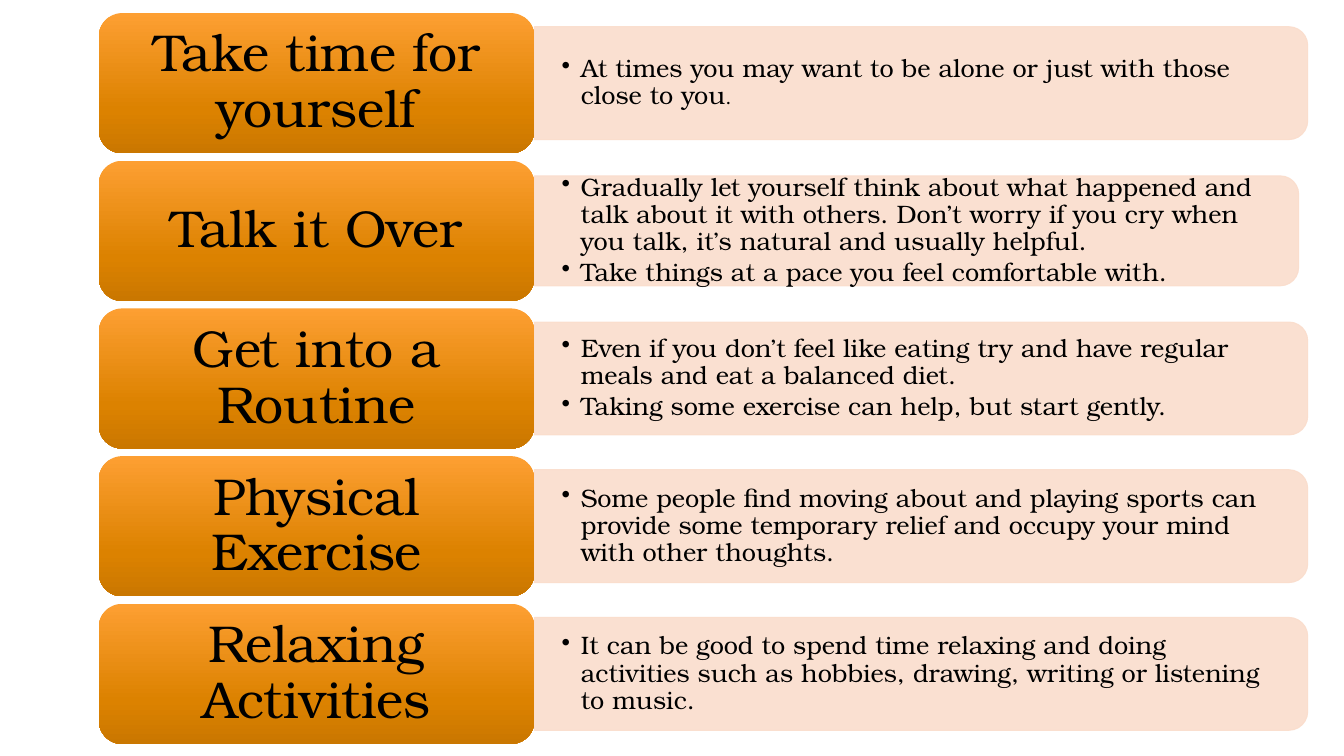
from copy import deepcopy

from lxml.etree import SubElement
from pptx import Presentation
from pptx.dml.color import RGBColor
from pptx.enum.shapes import MSO_SHAPE as Shape
from pptx.enum.text import MSO_ANCHOR as Anchor, PP_ALIGN as Align
from pptx.oxml.ns import qn
from pptx.util import Inches, Pt

FONT = "TeX Gyre Bonum"
COLORS = {"panel": "FADDCC", "text": "000000"}
LABEL_GRADIENT = [(0, "FD9F32"), (0.69, "DC8200"), (1, "CA7700")]

LEFT, TOP, PITCH = 0.98, 0.13, 1.465
LABEL_W, LABEL_H = 4.32, 1.39
PANEL_LEFT = LEFT + LABEL_W
WIDE, NARROW = (7.67, 1.12), (7.58, 1.09)

ADVICE = [
    ("Take time for yourself", WIDE, [
        ["At times you may want to be alone or just with those close to you", "."]]),
    ("Talk it Over", NARROW, [
        ["Gradually let yourself think about what happened and talk about it with "
         "others. Don’t worry if you cry when you talk, it’s natural and usually helpful."],
        ["Take things at a pace you feel comfortable with."]]),
    ("Get into a Routine", WIDE, [
        ["Even if you don’t feel like eating try and have regular meals and eat a "
         "balanced diet."],
        ["Taking some exercise can help, but start gently."]]),
    ("Physical Exercise", WIDE, [
        ["Some people find moving about and playing sports can provide some temporary "
         "relief and occupy your mind with other thoughts."]]),
    ("Relaxing Activities", WIDE, [
        ["It can be good to spend time relaxing and doing activities such as hobbies, "
         "drawing, writing or listening to music."]]),
]


def set_up_frame(frame, side_inset, end_inset):
    frame.word_wrap = True
    frame.vertical_anchor = Anchor.MIDDLE
    frame.margin_left = frame.margin_right = Inches(side_inset)
    frame.margin_top = frame.margin_bottom = Inches(end_inset)


def style_run(run, size):
    run.font.name = FONT
    run.font.size = Pt(size)
    run.font.color.rgb = RGBColor.from_string(COLORS["text"])


prs = Presentation()
prs.slide_width, prs.slide_height = Inches(13.33), Inches(7.5)
slide = prs.slides.add_slide(prs.slide_layouts[6])
shapes = slide.shapes

for row, (heading, (length, depth), points) in enumerate(ADVICE):
    top = TOP + row * PITCH
    middle = top + LABEL_H / 2

    # The panel is an upright shape turned so its rounded end faces right.
    panel = shapes.add_shape(
        Shape.ROUND_2_SAME_RECTANGLE,
        Inches(PANEL_LEFT + (length - depth) / 2), Inches(middle - length / 2),
        Inches(depth), Inches(length))
    panel.rotation = 90
    panel.shadow.inherit = False
    panel.fill.solid()
    panel.line.width = Pt(0.75)
    for paint in (panel.fill, panel.line.fill):
        paint.solid()
        paint.fore_color.rgb = RGBColor.from_string(COLORS["panel"])
    for color in panel._element.spPr.iter(qn("a:srgbClr")):
        SubElement(color, qn("a:alpha"), val="90000")

    advice = shapes.add_textbox(
        Inches(PANEL_LEFT), Inches(middle - depth / 2 + 0.05),
        Inches(length - 0.05), Inches(depth - 0.1))
    set_up_frame(advice.text_frame, 0.27, 0.14)
    advice.text_frame.text = "\n".join(parts[0] for parts in points)
    for point, parts in zip(advice.text_frame.paragraphs, points):
        point.line_spacing = 0.9
        point.space_after = Pt(2.7)
        properties = point._p.get_or_add_pPr()
        properties.set("marL", str(Inches(0.19)))
        properties.set("indent", str(Inches(-0.19)))
        SubElement(properties, qn("a:buChar"), char="•")
        style_run(point.runs[0], 18)
        for ending in parts[1:]:
            run = point.add_run()
            run.text = ending
            style_run(run, 14)

    label = shapes.add_shape(
        Shape.ROUNDED_RECTANGLE, Inches(LEFT), Inches(top),
        Inches(LABEL_W), Inches(LABEL_H))
    label.shadow.inherit = False
    label.line.fill.background()
    label.fill.gradient()
    label.fill.gradient_angle = 270
    stop_list = label._element.spPr.find(".//" + qn("a:gsLst"))
    stop_list.append(deepcopy(stop_list[-1]))
    for stop, (position, color) in zip(label.fill.gradient_stops, LABEL_GRADIENT):
        stop.position = position
        stop.color.rgb = RGBColor.from_string(color)
    set_up_frame(label.text_frame, 0.22, 0.15)
    label.text_frame.text = heading
    title = label.text_frame.paragraphs[0]
    title.alignment = Align.CENTER
    title.line_spacing = 0.9
    style_run(title.runs[0], 37)

prs.save("out.pptx")
